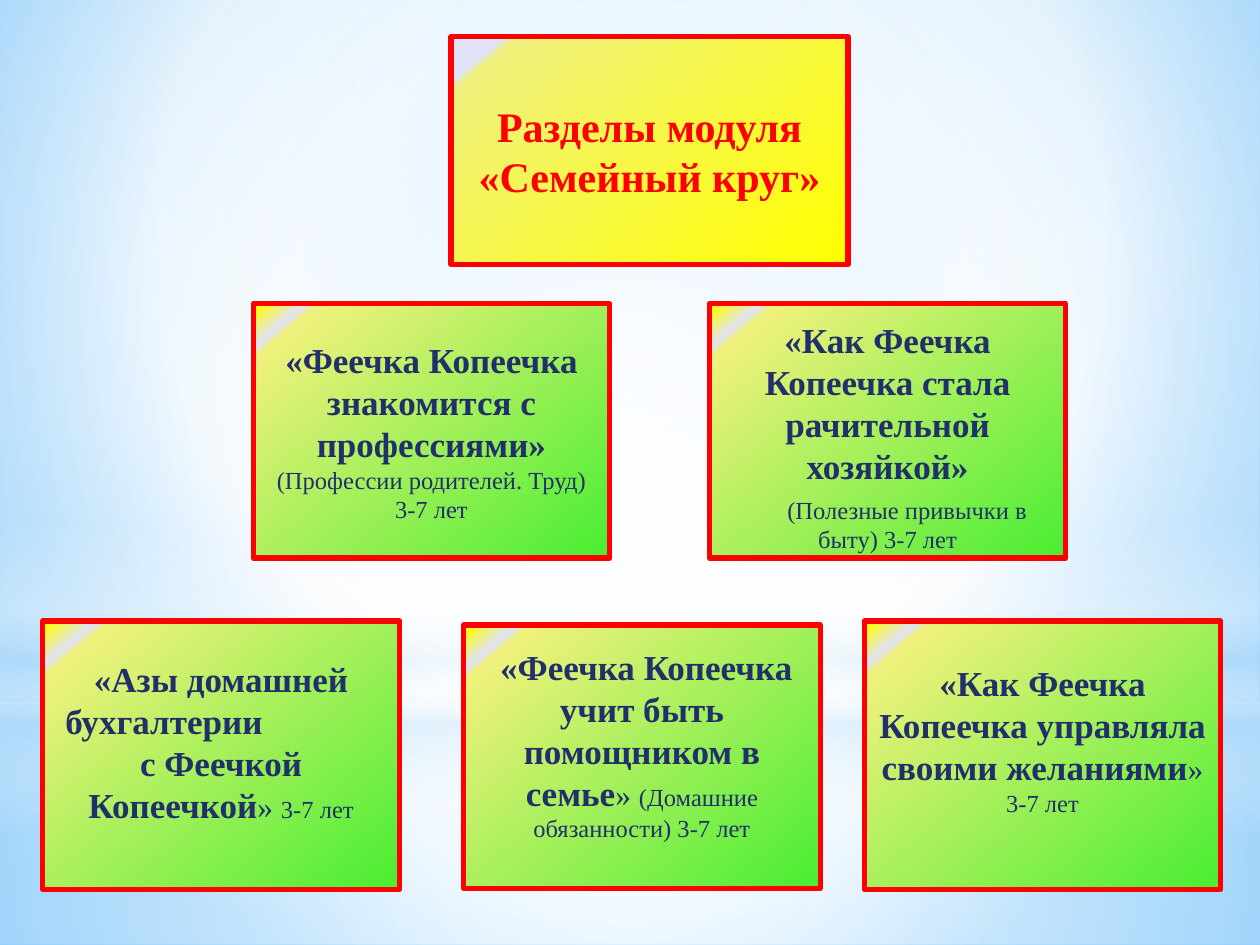
from lxml import etree
from pptx import Presentation, util as u
from pptx.dml.color import RGBColor
from pptx.enum import shapes, text
from pptx.oxml.ns import qn

FONT = "Times New Roman"
COLORS = {"red": "FF0000", "navy": "21306A", "white": "FFFFFF", "ice": "B4DCFA",
          "sky": "9ED5FF", "azure": "5BB9FF", "green": "48EE32",
          "yellow": "FFFF00", "straw": "F0F17C", "lilac": "E1E3F8"}
BIG, MEDIUM, SMALL = {"size": 20, "bold": True}, {"size": 18}, {"size": 14}
CENTER = (50, 50, 50, 50)

# Gradient stops: position %, colour, opacity %
SKY = [(0, "sky", 100), (60, "white", 100), (100, "azure", 100)]
CARD = [(0, "green", 100), (90, "straw", 100), (92, "lilac", 100), (99, "yellow", 100)]
HEADING = [(0, "yellow", 100), (90, "straw", 100), (92, "lilac", 100)]

# Backdrop: preset shape, box, stops, direction
BACKDROP = [
    ("RECTANGLE", (0, 5.58, 10, 1.92),
     [(0, "white", 91), (37, "white", 76), (100, "ice", 79)], {"focus": CENTER}),
    ("RECTANGLE", (0, 0, 10, 5.58),
     [(0, "white", 89), (48, "white", 62), (100, "ice", 79)], {"focus": CENTER}),
    ("RECTANGLE", (0, 4.12, 10, 2.5),
     [(0, "white", 0), (29, "white", 30), (45, "ice", 40), (55, "white", 26),
      (65, "ice", 60), (100, "white", 0)], {"angle": 90}),
    ("OVAL", (0, 1.75, 10, 5.58),
     [(0, "white", 100), (56, "white", 0)], {"focus": CENTER}),
]

TITLE_BOX = (3.58, 0.29, 3.15, 1.81)
TITLE = ["Разделы модуля", "«Семейный круг»"]

# Cards: left, top, height, (top, bottom) insets, paragraphs of (runs, format)
CARD_WIDTH = 2.83
CARDS = [
    (2.01, 2.41, 2.02, (0.05, 0.05), [
        ([("«Феечка Копеечка знакомится с профессиями» ", BIG),
          ("(Профессии родителей. Труд) 3-7 лет", SMALL)], {})]),
    (5.63, 2.41, 2.02, (0.13, 0.05), [
        ([("«Как Феечка Копеечка стала рачительной хозяйкой»", BIG)], {}),
        ([("(Полезные привычки в быту) 3-7 лет", SMALL)], {"indent": 0.31, "before": 5})]),
    (0.34, 4.93, 2.13, (0.05, 0.27), [
        ([("«Азы домашней", BIG)], {}),
        ([("бухгалтерии", BIG)], {"align": "LEFT", "indent": 0.08}),
        ([("с Феечкой Копеечкой", BIG), ("» ", MEDIUM), ("3-7 лет", SMALL)], {})]),
    (3.68, 4.96, 2.09, (0.05, 0.25), [
        ([("«Феечка Копеечка учит быть помощником в семье", BIG), ("» ", MEDIUM),
          ("(Домашние обязанности) 3-7 лет", SMALL)], {"indent": 0.07})]),
    (6.86, 4.93, 2.13, (0.05, 0.3), [
        ([("«Как Феечка Копеечка управляла своими желаниями", BIG), ("»", MEDIUM)], {}),
        ([("3-7 лет", SMALL)], {})]),
]


def paint(fill, root, stops, angle=0, focus=None):
    """Fill with a gradient: linear at an angle, or circular around a focus."""
    fill.gradient()
    gradient = root.find(".//" + qn("a:gradFill"))
    for child in list(gradient):
        gradient.remove(child)
    stop_list = etree.SubElement(gradient, qn("a:gsLst"))
    for position, color, opacity in stops:
        stop = etree.SubElement(stop_list, qn("a:gs"), pos=str(position * 1000))
        tint = etree.SubElement(stop, qn("a:srgbClr"), val=COLORS[color])
        if opacity < 100:
            etree.SubElement(tint, qn("a:alpha"), val=str(opacity * 1000))
    if focus:
        circle = etree.SubElement(gradient, qn("a:path"), path="circle")
        sides = {side: str(part * 1000) for side, part in zip("ltrb", focus)}
        etree.SubElement(circle, qn("a:fillToRect"), **sides)
    else:
        etree.SubElement(gradient, qn("a:lin"), ang=str(angle * 60000), scaled="0")


def add_box(slide, kind, box):
    shape = slide.shapes.add_shape(shapes.MSO_SHAPE[kind], *map(u.Inches, box))
    shape.shadow.inherit = False
    shape.line.fill.background()
    return shape


def style_panel(shape, stops, insets):
    """Gradient panel with a red border and middle-anchored text."""
    paint(shape.fill, shape.element, stops, angle=230)
    shape.line.color.rgb = RGBColor.from_string(COLORS["red"])
    shape.line.width = u.Pt(3)
    frame = shape.text_frame
    frame.word_wrap = True
    frame.auto_size = text.MSO_AUTO_SIZE.NONE
    frame.vertical_anchor = text.MSO_ANCHOR.MIDDLE
    frame.margin_top, frame.margin_bottom = map(u.Inches, insets)
    return frame


def add_run(paragraph, content, size=18, bold=False, color="navy"):
    run = paragraph.add_run()
    run.text = content
    run.font.name, run.font.size, run.font.bold = FONT, u.Pt(size), bold
    run.font.color.rgb = RGBColor.from_string(COLORS[color])


def write(frame, paragraphs):
    for index, (runs, layout) in enumerate(paragraphs):
        paragraph = frame.add_paragraph() if index else frame.paragraphs[0]
        paragraph.alignment = text.PP_ALIGN[layout.get("align", "CENTER")]
        paragraph.space_before = u.Pt(layout.get("before", 0))
        if "indent" in layout:
            properties = paragraph._p.get_or_add_pPr()
            properties.set("indent", str(u.Inches(layout["indent"])))
        for content, style in runs:
            add_run(paragraph, content, **style)


def main():
    presentation = Presentation()
    presentation.slide_width, presentation.slide_height = u.Inches(10), u.Inches(7.5)
    slide = presentation.slides.add_slide(presentation.slide_layouts[5])

    # Background and soft light
    paint(slide.background.fill, slide.element, SKY, focus=(20, 10, 20, 60))
    for kind, box, stops, direction in BACKDROP:
        shape = add_box(slide, kind, box)
        paint(shape.fill, shape.element, stops, **direction)

    # Title, raised above the backdrop
    title = slide.shapes.title
    title.left, title.top, title.width, title.height = map(u.Inches, TITLE_BOX)
    slide.shapes.element.append(title.element)
    heading = {"size": 24, "bold": True, "color": "red"}
    write(style_panel(title, HEADING, (0.05, 0.05)),
          [([(line, heading)], {}) for line in TITLE])

    # Section cards
    for left, top, height, insets, paragraphs in CARDS:
        card = add_box(slide, "RECTANGLE", (left, top, CARD_WIDTH, height))
        write(style_panel(card, CARD, insets), paragraphs)

    presentation.save("out.pptx")


if __name__ == "__main__":
    main()
